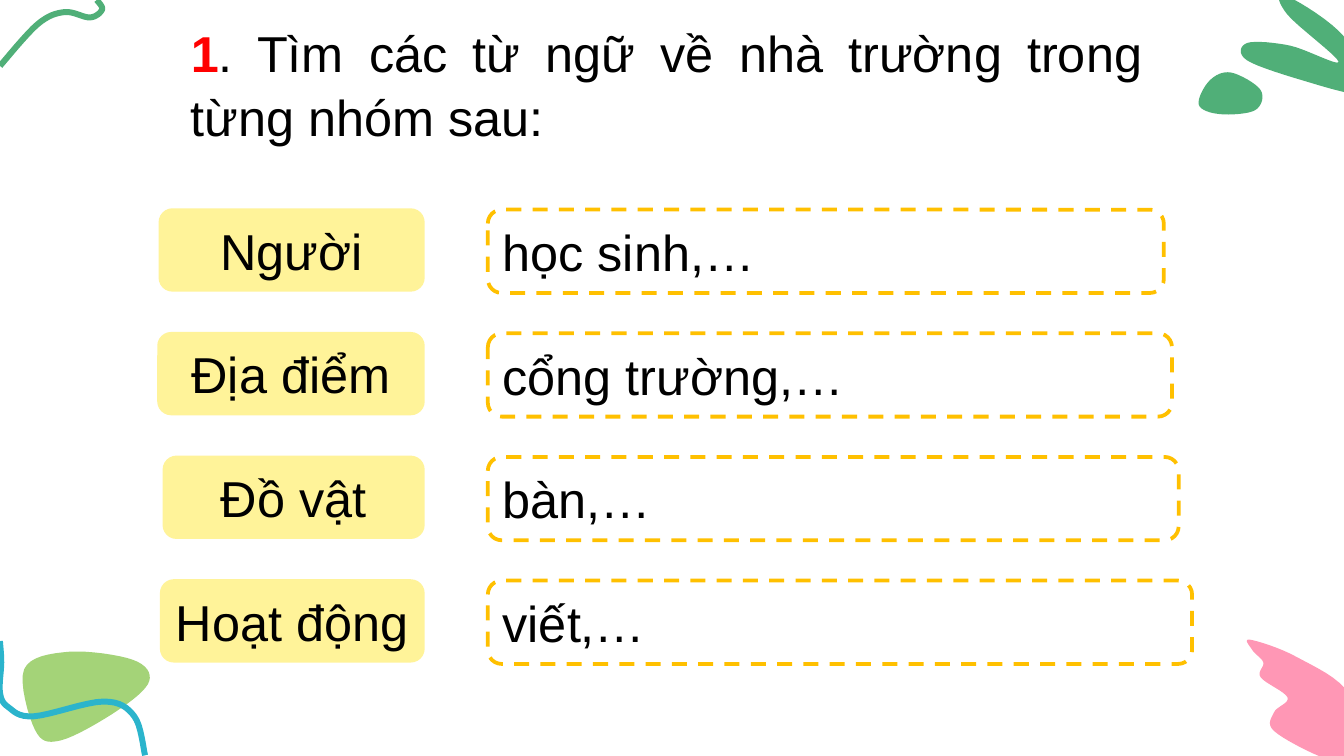
from pptx import Presentation
from pptx.dml.color import RGBColor
from pptx.enum.dml import MSO_LINE
from pptx.enum.shapes import MSO_SHAPE
from pptx.enum.text import MSO_ANCHOR, MSO_AUTO_SIZE, PP_ALIGN
from pptx.util import Inches, Pt

COLORS = {
    "black": "000000", "white": "FFFFFF", "red": "FF0000",
    "label": "FFF399", "dash": "FFC000",
    "lime": "A4D378", "teal": "2BB4CC", "pink": "FF97B5", "green": "50AF78",
}
COLOR = {name: RGBColor.from_string(value) for name, value in COLORS.items()}

prs = Presentation()
prs.slide_width = Inches(10)
prs.slide_height = Inches(10 * 9 / 16)
slide = prs.slides.add_slide(prs.slide_layouts[5])
shapes = slide.shapes


def write(paragraph, text, size=27, color="black", bold=False, align=PP_ALIGN.JUSTIFY):
    paragraph.alignment = align
    run = paragraph.add_run()
    run.text = text
    run.font.name = "Arial"
    run.font.size = Pt(size)
    run.font.bold = bold
    run.font.color.rgb = COLOR[color]


def draw_curve(knots, closed, steps=8):
    """Draw a smooth Catmull-Rom curve through the knots."""
    ring = [knots[-1], *knots, *knots[:2]] if closed else [knots[0], *knots, knots[-1]]
    points = []
    for quad in zip(ring, ring[1:], ring[2:], ring[3:]):
        for step in range(1, steps + 1):
            t = step / steps
            points.append([
                Inches(b + t * (c - a + t * (2 * a - 5 * b + 4 * c - d
                                             + t * (3 * b - a - 3 * c + d))) / 2)
                for a, b, c, d in zip(*quad)])
    builder = shapes.build_freeform(*[Inches(value) for value in knots[0]])
    builder.add_line_segments(points, close=closed)
    curve = builder.convert_to_shape()
    curve.shadow.inherit = False
    return curve


# Corner decorations: colour, closed blob or open ribbon, knots
decorations = [
    ("lime", True, [(0.45, 5.51), (0.87, 5.29), (1.11, 5.07), (0.99, 4.91),
                    (0.51, 4.85), (0.18, 4.98), (0.26, 5.43)]),
    ("teal", False, [(0, 4.77), (0.01, 4.93), (0, 5.15), (0.06, 5.26),
                     (0.25, 5.33), (0.77, 5.22), (1, 5.33), (1.08, 5.62)]),
    ("pink", True, [(9.3, 4.76), (9.65, 4.89), (10.04, 5.17), (10.06, 5.65),
                    (9.85, 5.64), (9.48, 5.44), (9.48, 5.3), (9.58, 5.19),
                    (9.38, 5.04), (9.4, 4.93), (9.32, 4.84)]),
    ("green", True, [(9.55, -0.04), (9.96, 0.23), (10.25, 0.64), (10.14, 0.71),
                     (9.73, 0.61), (9.28, 0.45), (9.28, 0.32), (9.6, 0.34),
                     (9.96, 0.46), (9.58, 0.11)]),
    ("green", False, [(0, 0.49), (0.28, 0.18), (0.48, 0.09), (0.67, 0.13),
                      (0.76, 0.07), (0.72, 0)]),
    ("green", True, [(9.16, 0.54), (9.38, 0.67), (9.34, 0.82), (9.08, 0.85),
                     (8.92, 0.78), (9, 0.6)]),
]
for color, closed, knots in decorations:
    decoration = draw_curve(knots, closed)
    if closed:
        decoration.fill.solid()
        decoration.fill.fore_color.rgb = COLOR[color]
        decoration.line.fill.background()
    else:
        decoration.fill.background()
        decoration.line.color.rgb = COLOR[color]
        decoration.line.width = Pt(3.2)

# Question
question = shapes.title
question.left, question.top = Inches(1.32), Inches(0.57)
question.width, question.height = Inches(7.28), Inches(0.62)
frame = question.text_frame
frame.word_wrap = True
frame.auto_size = MSO_AUTO_SIZE.NONE
frame.vertical_anchor = MSO_ANCHOR.BOTTOM
frame.margin_left = frame.margin_right = Inches(0.1)
frame.margin_top = frame.margin_bottom = Inches(0.1)
sentence = frame.paragraphs[0]
sentence.line_spacing = 1.05
write(sentence, "1", color="red", bold=True)
write(sentence, ". Tìm các từ ngữ về nhà trường trong từng nhóm sau:")

# Word groups: labels share a right edge, answers share a left edge
FIRST_ROW, ROW_STEP, ROW_HEIGHT = 1.55, 0.92, 0.62
LABEL_RIGHT, ANSWER_LEFT = 3.16, 3.63
groups = [
    ("Người", 1.98, "học sinh,…", 5.03),
    ("Địa điểm", 1.99, "cổng trường,…", 5.09),
    ("Đồ vật", 1.95, "bàn,…", 5.14),
    ("Hoạt động", 1.97, "viết,…", 5.24),
]
for row, (label, label_width, answer, answer_width) in enumerate(groups):
    top = FIRST_ROW + row * ROW_STEP
    for text, left, y, width, fill, align in [
        (label, LABEL_RIGHT - label_width, top, label_width, "label", PP_ALIGN.CENTER),
        (answer, ANSWER_LEFT, top + 0.01, answer_width, "white", PP_ALIGN.JUSTIFY),
    ]:
        card = shapes.add_shape(MSO_SHAPE.ROUNDED_RECTANGLE, Inches(left), Inches(y),
                                Inches(width), Inches(ROW_HEIGHT))
        card.shadow.inherit = False
        card.fill.solid()
        card.fill.fore_color.rgb = COLOR[fill]
        if fill == "white":
            card.line.color.rgb = COLOR["dash"]
            card.line.width = Pt(2)
            card.line.dash_style = MSO_LINE.DASH
        else:
            card.line.fill.background()
        frame = card.text_frame
        frame.word_wrap = True
        frame.vertical_anchor = MSO_ANCHOR.MIDDLE
        frame.margin_left = frame.margin_right = Inches(0.08)
        frame.margin_top = frame.margin_bottom = Inches(0.04)
        write(frame.paragraphs[0], text, align=align)

prs.save("out.pptx")
